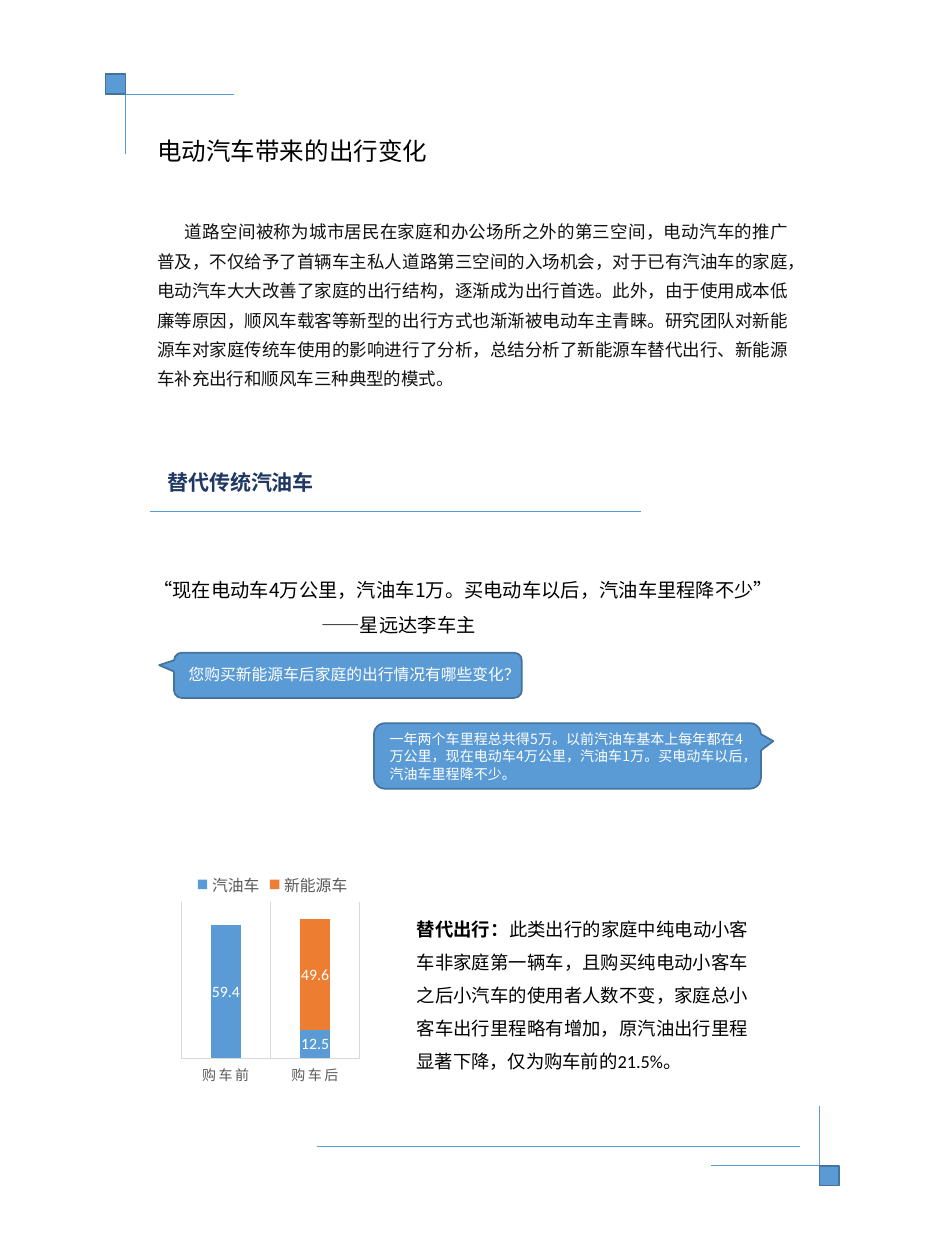
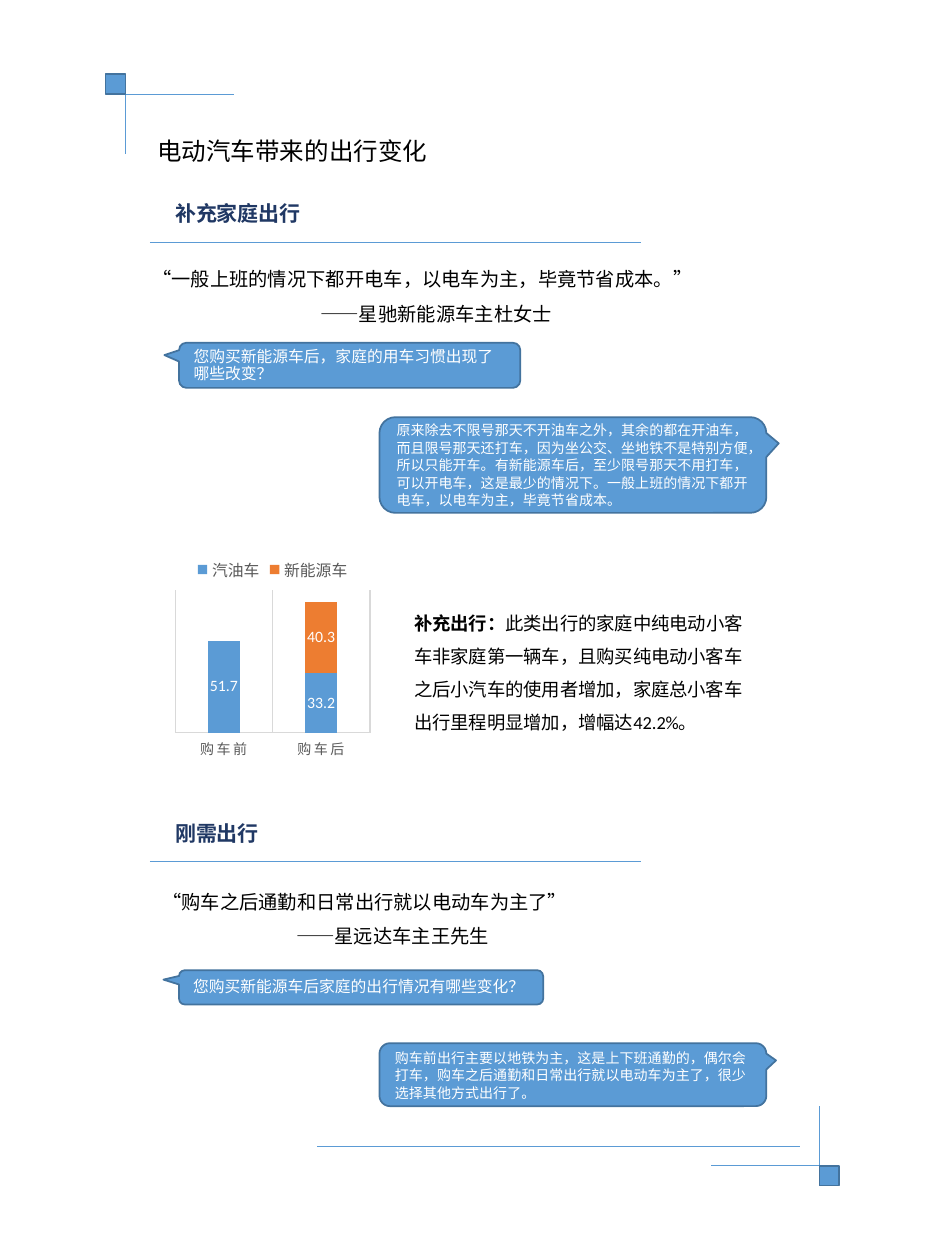
from lxml.etree import SubElement
from pptx import Presentation
from pptx.chart.data import CategoryChartData
from pptx.dml.color import RGBColor
from pptx.enum.chart import (XL_CHART_TYPE as ChartType, XL_LABEL_POSITION as LabelPos,
                             XL_LEGEND_POSITION as LegendPos, XL_TICK_MARK as TickMark)
from pptx.enum.shapes import MSO_CONNECTOR as Connector, MSO_SHAPE as Shape
from pptx.enum.text import MSO_ANCHOR as Anchor, PP_ALIGN as Align
from pptx.oxml import parse_xml
from pptx.oxml.ns import nsdecls, qn
from pptx.util import Cm, Pt

WIDTH, HEIGHT = 19.05, 25.4
COLORS = {"blue": "5B9BD5", "edge": "43739E", "orange": "ED7D31", "navy": "203864",
          "black": "000000", "ink": "111111", "gray": "595959", "grid": "D9D9D9",
          "white": "FFFFFF"}
CJK, LATIN, BODY = "Noto Sans CJK SC", "Calibri", "Arial"


def rgb(name):
    return RGBColor.from_string(COLORS[name])


class Report:
    """Holds the style and the current page."""

    def __init__(self):
        self.deck = Presentation()
        self.deck.slide_width, self.deck.slide_height = Cm(WIDTH), Cm(HEIGHT)
        self.page = None

    def new_page(self, title):
        self.page = self.deck.slides.add_slide(self.deck.slide_layouts[6])
        self.corner()
        self.corner(mirrored=True)
        self.line(6.4, 23.11, 16.13, 23.11)
        self.text(2.92, 2.62, 11, 0.86, [(title, False)], 14)

    def style(self, font, size, color, name, bold=False):
        font.size, font.name, font.bold = Pt(size), name, bold
        font.color.rgb = rgb(color)

    def add_span(self, para, text, size, color, name, bold=False):
        span = para.add_run()
        span.text = text
        self.style(span.font, size, color, name, bold)

    def line(self, x1, y1, x2, y2):
        rule = self.page.shapes.add_connector(Connector.STRAIGHT, Cm(x1), Cm(y1), Cm(x2), Cm(y2))
        rule.line.color.rgb, rule.line.width = rgb("blue"), Pt(0.5)
        SubElement(rule._element.spPr, qn("a:effectLst"))

    def shape(self, kind, x, y, w, h):
        item = self.page.shapes.add_shape(kind, Cm(x), Cm(y), Cm(w), Cm(h))
        item.shadow.inherit = False
        item.fill.solid()
        item.fill.fore_color.rgb = rgb("blue")
        item.line.color.rgb, item.line.width = rgb("edge"), Pt(1)
        return item

    def corner(self, mirrored=False):
        """Square with two rules; the second one is turned about the page centre."""
        def place(x, y):
            return (WIDTH - x, HEIGHT - y) if mirrored else (x, y)

        side, left, top = 0.4, 2.13, 1.5
        right, bottom = left + side, top + side
        self.line(*place(left, bottom), *place(4.72, bottom))
        self.line(*place(right, top), *place(right, 3.1))
        x, y = place(right, bottom) if mirrored else (left, top)
        self.shape(Shape.RECTANGLE, x, y, side, side)

    def text(self, x, y, w, h, spans, size, color="black", name=CJK, spacing=None,
             align=Align.LEFT, first_indent=0):
        box = self.page.shapes.add_textbox(Cm(x), Cm(y), Cm(w), Cm(h))
        box.text_frame.word_wrap = True
        para = box.text_frame.paragraphs[0]
        para.alignment = align
        if spacing:
            para.line_spacing = spacing
        if first_indent:
            para._p.get_or_add_pPr().set("indent", str(Cm(first_indent)))
        for words, bold in spans:
            self.add_span(para, words, size, color, name, bold)
        return box

    def heading(self, x, y, words, rule_y):
        self.text(x, y, 7.7, 0.76, [(words, True)], 12, "navy")
        self.line(3.02, rule_y, 12.93, rule_y)

    def quote(self, x, y, words, speaker, indent):
        box = self.text(x, y, 13.64, 1.68, [(words, False)], 11, spacing=1.5)
        para = box.text_frame.add_paragraph()
        para.line_spacing = 1.5
        para._p.get_or_add_pPr().set("marL", str(Cm(indent)))
        self.add_span(para, speaker, 11, "black", CJK)

    def bubble(self, x, y, w, h, words, size, tail):
        box = self.shape(Shape.ROUNDED_RECTANGULAR_CALLOUT, x, y, w, h)
        for index, value in enumerate((tail, -0.226, 0.167)):
            box.adjustments[index] = value
        frame = box.text_frame
        frame.word_wrap, frame.vertical_anchor = True, Anchor.MIDDLE
        para = frame.paragraphs[0]
        para.alignment, para.line_spacing = Align.LEFT, Pt(10)
        self.add_span(para, words, size, "white", CJK)

    def question(self, x, y, w, h, words):
        self.bubble(x, y, w, h, words, 9, -0.543)

    def answer(self, x, y, h, words, tail=0.532):
        self.bubble(x, y, 7.8, h, words, 8, tail)

    def finding(self, x, y, h, label, words, align=Align.LEFT):
        self.text(x, y, 7.19, h, [(label, True), (words, False)], 10.5,
                  name=LATIN, spacing=1.5, align=align)

    def mileage_chart(self, y, h, fuel, electric, top, plot_area):
        data = CategoryChartData(number_format="0.0")
        data.categories = ["购车前", "购车后"]
        data.add_series("汽油车", fuel)
        data.add_series("新能源车", electric)
        chart = self.page.shapes.add_chart(ChartType.COLUMN_STACKED, Cm(3.45), Cm(y),
                                           Cm(4.09), Cm(h), data).chart
        self.style(chart.font, 10, "black", LATIN)
        chart.has_title = False
        chart.has_legend = True
        chart.legend.position, chart.legend.include_in_layout = LegendPos.TOP, False
        self.style(chart.legend.font, 9, "gray", LATIN)

        # Axes
        value_axis, axis = chart.value_axis, chart.category_axis
        value_axis.visible = value_axis.has_major_gridlines = False
        value_axis.minimum_scale, value_axis.maximum_scale = 0, top
        axis.major_tick_mark = axis.minor_tick_mark = TickMark.NONE
        axis.has_major_gridlines = True
        for stroke in (axis.format.line, axis.major_gridlines.format.line):
            stroke.color.rgb, stroke.width = rgb("grid"), Pt(0.75)
        self.style(axis.tick_labels.font, 8, "gray", LATIN)
        axis._element.find(".//" + qn("a:defRPr")).set("spc", "120")

        # Columns
        plot = chart.plots[0]
        plot.gap_width, plot.overlap, plot.vary_by_categories = 200, 100, False
        for series, color in zip(plot.series, ("blue", "orange")):
            series.format.fill.solid()
            series.format.fill.fore_color.rgb = rgb(color)
            labels = series.data_labels
            labels.show_value, labels.position = True, LabelPos.CENTER
            labels.number_format, labels.number_format_is_linked = "0.0", False
            self.style(labels.font, 9, "white", LATIN)

        # Inner plot area as shares of the chart
        area = chart._chartSpace.chart.plotArea
        for old in area.findall(qn("c:layout")):
            area.remove(old)
        shares = "".join(f'<c:{key} val="{share}"/>' for key, share in zip("xywh", plot_area))
        area.insert(0, parse_xml(
            f'<c:layout {nsdecls("c")}><c:manualLayout><c:layoutTarget val="inner"/>'
            f'<c:xMode val="edge"/><c:yMode val="edge"/>{shares}</c:manualLayout></c:layout>'))


def main():
    report = Report()
    title = "电动汽车带来的出行变化"
    change_question = "您购买新能源车后家庭的出行情况有哪些变化？"

    # Page 1: introduction and replacing the petrol car
    report.new_page(title)
    report.text(2.92, 4.17, 13.21, 3.84, [(
        "道路空间被称为城市居民在家庭和办公场所之外的第三空间，电动汽车的推广普及，"
        "不仅给予了首辆车主私人道路第三空间的入场机会，对于已有汽油车的家庭，"
        "电动汽车大大改善了家庭的出行结构，逐渐成为出行首选。此外，由于使用成本低廉等原因，"
        "顺风车载客等新型的出行方式也渐渐被电动车主青睐。"
        "研究团队对新能源车对家庭传统车使用的影响进行了分析，"
        "总结分析了新能源车替代出行、新能源车补充出行和顺风车三种典型的模式。", False)],
        10, "ink", BODY, spacing=1.4, align=Align.JUSTIFY, first_indent=0.56)
    report.heading(3.12, 9.35, "替代传统汽油车", 10.31)
    report.quote(2.84, 11.3, "“现在电动车4万公里，汽油车1万。买电动车以后，汽油车里程降不少”",
                 "——星远达李车主", 3.39)
    report.question(3.51, 13.16, 7.01, 0.91, change_question)
    report.answer(7.54, 14.58, 1.32,
                  "一年两个车里程总共得5万。以前汽油车基本上每年都在4万公里，"
                  "现在电动车4万公里，汽油车1万。买电动车以后，汽油车里程降不少。")
    report.mileage_chart(17.32, 4.78, (59.4, 12.5), (None, 49.6), 70, (0.05, 0.18, 0.88, 0.66))
    report.finding(8.15, 18.16, 3.63, "替代出行：",
                   "此类出行的家庭中纯电动小客车非家庭第一辆车，"
                   "且购买纯电动小客车之后小汽车的使用者人数不变，家庭总小客车出行里程略有增加，"
                   "原汽油出行里程显著下降，仅为购车前的21.5%。", Align.JUSTIFY)

    # Page 2: supplementary trips
    report.new_page(title)
    report.heading(3.28, 3.91, "补充家庭出行", 4.88)
    report.quote(2.82, 5.03, "“一般上班的情况下都开电车，以电车为主，毕竟节省成本。”",
                 "——星驰新能源车主杜女士", 3.39)
    report.question(3.61, 6.91, 6.88, 0.91, "您购买新能源车后，家庭的用车习惯出现了哪些改变？")
    report.answer(7.65, 8.41, 1.93,
                  "原来除去不限号那天不开油车之外，其余的都在开油车，而且限号那天还打车，"
                  "因为坐公交、坐地铁不是特别方便，所以只能开车。有新能源车后，"
                  "至少限号那天不用打车，可以开电车，这是最少的情况下。"
                  "一般上班的情况下都开电车，以电车为主，毕竟节省成本。")
    report.mileage_chart(10.97, 4.42, (51.7, 33.2), (None, 40.3), 80, (0.02, 0.21, 0.96, 0.65))
    report.finding(8.1, 11.99, 2.95, "补充出行：",
                   "此类出行的家庭中纯电动小客车非家庭第一辆车，"
                   "且购买纯电动小客车之后小汽车的使用者增加，"
                   "家庭总小客车出行里程明显增加，增幅达42.2%。")

    # Page 2: essential trips
    report.heading(3.28, 16.41, "刚需出行", 17.37)
    report.quote(3.02, 17.58, "“购车之后通勤和日常出行就以电动车为主了”", "——星远达车主王先生", 2.7)
    report.question(3.61, 19.56, 7.34, 0.69, change_question)
    report.answer(7.65, 21.03, 1.27,
                  "购车前出行主要以地铁为主，这是上下班通勤的，偶尔会打车，"
                  "购车之后通勤和日常出行就以电动车为主了，很少选择其他方式出行了。", 0.525)

    report.deck.save("out.pptx")


if __name__ == "__main__":
    main()
